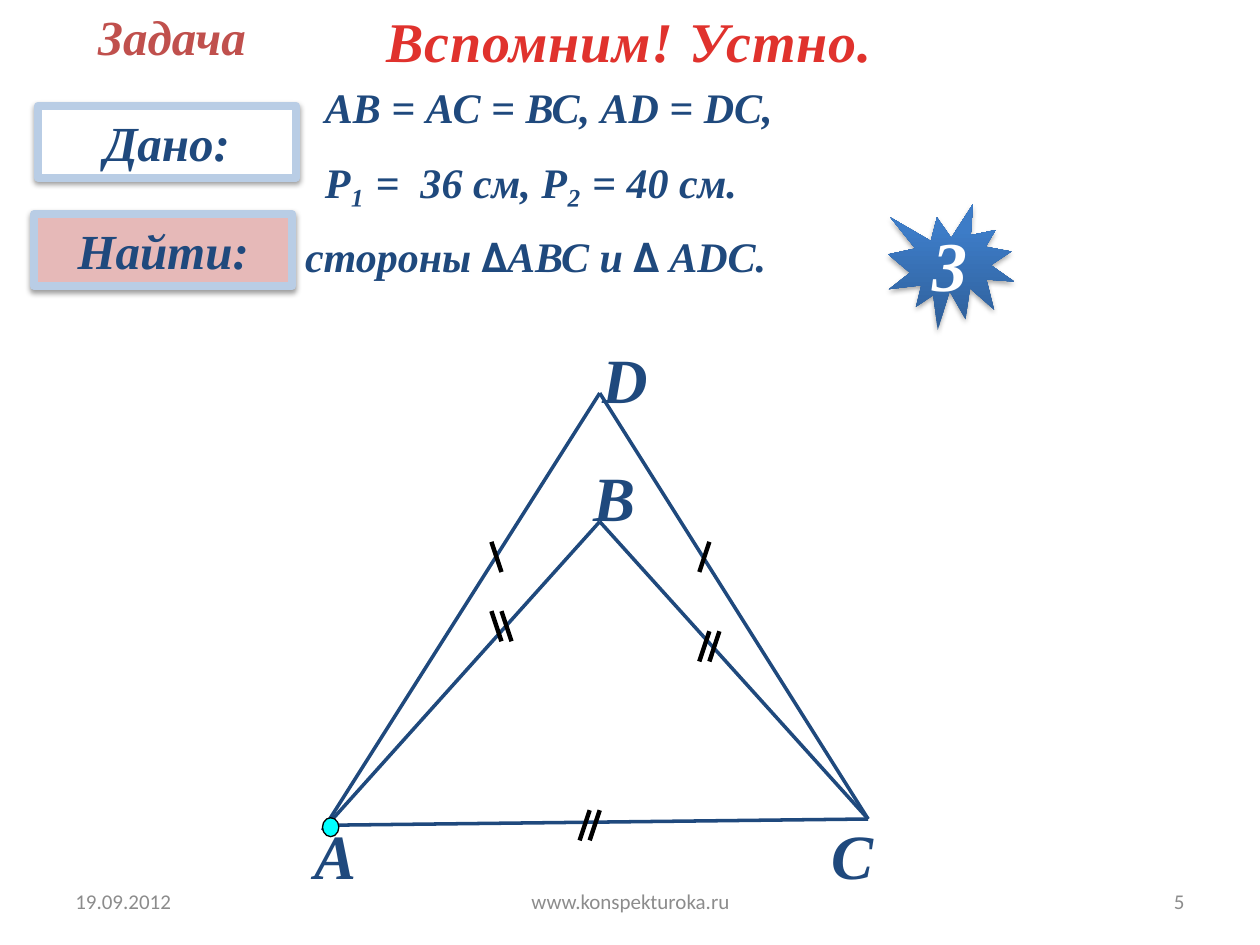
from itertools import groupby
from lxml.etree import SubElement
from pptx import Presentation
from pptx.dml.color import RGBColor
from pptx.enum.shapes import MSO_CONNECTOR, MSO_SHAPE
from pptx.enum.text import MSO_ANCHOR, PP_ALIGN
from pptx.oxml.ns import qn
from pptx.util import Inches, Pt

NAVY, GREY, BLACK = "1F497D", "8C8C8C", "000000"
LEFT, CENTER, RIGHT = PP_ALIGN.LEFT, PP_ALIGN.CENTER, PP_ALIGN.RIGHT
TOP, MIDDLE = MSO_ANCHOR.TOP, MSO_ANCHOR.MIDDLE
SYMBOL, SYMBOL_FONT = "∆", "DejaVu Sans Mono"

HEADING = ("Вспомним! Устно.", (2.95, 0, 4.09, 0.64))
FOOTERS = [
    ("19.09.2012", (0.5, 6.95, 2.33, 0.4), LEFT),
    ("www.konspekturoka.ru", (3.42, 6.95, 3.17, 0.4), CENTER),
    ("5", (7.17, 6.95, 2.33, 0.4), RIGHT),
]
TASK_LABEL = ("Задача", (0.67, 0, 1.39, 0.57))
CONDITIONS = [
    (["АВ = АС = ВС, АD = DC,", "P₁ =  36 см, P₂ = 40 см."], (2.48, 0.59, 4.02, 1.11)),
    ([" стороны ∆АВС и ∆ АDС."], (2.24, 1.78, 4.25, 0.5)),
]
LABEL_BOXES = [
    ("Дано:", (0.3, 0.84, 2.05, 0.57), "FFFFFF"),
    ("Найти:", (0.27, 1.7, 2.05, 0.57), "E6B9B8"),
]
STAR = ("3", (7.05, 1.62, 1, 1))
VERTEX_LABELS = [
    ("D", (4.68, 2.65, 0.57, 0.71)),
    ("С", (6.5, 6.43, 0.54, 0.71)),
    ("А", (2.4, 6.43, 0.54, 0.71)),
    ("В", (4.61, 3.59, 0.54, 0.71)),
]
A, B, C, D = (2.56, 6.59), (4.76, 4.14), (6.89, 6.5), (4.76, 3.12)
SIDES = [(A, D), (D, C), ((2.56, 6.55), C), (A, B), (B, C)]
POINT_A = (2.56, 6.49, 0.13, 0.15)
TICK_WIDTH, TICK_HEIGHT, TICK_GAP = 0.08, 0.24, 0.08
TICKS = [
    (4.68, 6.55, -1, 2),
    (3.98, 4.97, 1, 2),
    (5.63, 5.13, -1, 2),
    (3.94, 4.42, 1, 1),
    (5.59, 4.42, -1, 1),
]


def color(value):
    return RGBColor.from_string(value)


def place(box):
    return [Inches(value) for value in box]


def serif(size, value=NAVY):
    return {"size": Pt(size), "name": "Times New Roman", "bold": True, "italic": True, "color": value}


def write(shape, texts, style, align=LEFT, anchor=TOP, wrap=True, hanging=0):
    frame = shape.text_frame
    frame.word_wrap = wrap
    frame.vertical_anchor = anchor
    for index, text in enumerate(texts):
        paragraph = frame.add_paragraph() if index else frame.paragraphs[0]
        paragraph.alignment = align
        if index:
            paragraph.space_before = Pt(14)
        if hanging:
            properties = paragraph._p.get_or_add_pPr()
            properties.set("marL", str(Inches(hanging)))
            properties.set("indent", str(-Inches(hanging)))
        for is_symbol, characters in groupby(text, lambda character: character == SYMBOL):
            run = paragraph.add_run()
            run.text = "".join(characters)
            for name, value in style.items():
                if name == "color":
                    run.font.color.rgb = color(value)
                else:
                    setattr(run.font, name, value)
            if is_symbol:
                run.font.name = SYMBOL_FONT


def add_text(slide, texts, box, style, **options):
    write(slide.shapes.add_textbox(*place(box)), texts, style, **options)


def add_shape(slide, kind, box, fill=None, line=None, width=0):
    shape = slide.shapes.add_shape(kind, *place(box))
    shape.shadow.inherit = False
    if fill:
        shape.fill.solid()
        shape.fill.fore_color.rgb = color(fill)
    if line:
        shape.line.color.rgb = color(line)
        shape.line.width = Pt(width)
    else:
        shape.line.fill.background()
    return shape


def add_shadow(shape, opacity, distance):
    effects = shape._element.spPr.find(qn("a:effectLst"))
    shadow = SubElement(effects, qn("a:outerShdw"), blurRad=str(Pt(3.1)),
                        dist=str(Pt(distance)), dir="5400000", rotWithShape="0")
    shade = SubElement(shadow, qn("a:srgbClr"), val=BLACK)
    SubElement(shade, qn("a:alpha"), val=str(opacity * 1000))


def add_line(slide, start, end, value, width):
    line = slide.shapes.add_connector(MSO_CONNECTOR.STRAIGHT, *place(start + end))
    line.line.color.rgb = color(value)
    line.line.width = Pt(width)
    SubElement(line._element.spPr, qn("a:effectLst"))


def add_ticks(slide, x, y, lean, count):
    for index in range(count):
        middle = x + (index - (count - 1) / 2) * TICK_GAP
        shift = lean * TICK_WIDTH / 2
        add_line(slide, (middle - shift, y - TICK_HEIGHT / 2),
                 (middle + shift, y + TICK_HEIGHT / 2), BLACK, 2.5)


def add_star(slide, text, box):
    star = add_shape(slide, MSO_SHAPE.EXPLOSION1, box)
    star.fill.gradient()
    star.fill.gradient_angle = 90
    for stop, (position, value) in zip(star.fill.gradient_stops, [(0, "2F5F99"), (0.8, "3D7CC7")]):
        stop.position = position
        stop.color.rgb = color(value)
    add_shadow(star, 35, 1.8)
    write(star, [text], serif(40, "FFFFFF"), align=CENTER, anchor=MIDDLE)


def main():
    presentation = Presentation()
    presentation.slide_width, presentation.slide_height = Inches(10), Inches(7.5)
    slide = presentation.slides.add_slide(presentation.slide_layouts[5])

    text, box = HEADING
    title = slide.shapes.title
    title.left, title.top, title.width, title.height = place(box)
    write(title, [text], serif(32, "E0322D"), align=CENTER, wrap=False)
    title.text_frame.paragraphs[0].runs[0]._r.get_or_add_rPr().set("spc", "50")

    for text, box, align in FOOTERS:
        add_text(slide, [text], box, {"size": Pt(12), "name": "Calibri", "color": GREY},
                 align=align, anchor=MIDDLE)
    text, box = TASK_LABEL
    add_text(slide, [text], box, serif(28, "C0504D"), align=CENTER, wrap=False)
    for text, box, fill in LABEL_BOXES:
        label = add_shape(slide, MSO_SHAPE.RECTANGLE, box, fill, "B9CDE5", 4.5)
        add_shadow(label, 38, 1.6)
        write(label, [text], serif(28), align=CENTER)
    for texts, box in CONDITIONS:
        add_text(slide, texts, box, serif(24), anchor=MIDDLE, hanging=0.5)

    for start, end in SIDES:
        add_line(slide, start, end, NAVY, 2)
    add_shape(slide, MSO_SHAPE.OVAL, POINT_A, "00FFFF", BLACK, 0.75)
    for text, box in VERTEX_LABELS:
        add_text(slide, [text], box, serif(36), wrap=False)
    for tick in TICKS:
        add_ticks(slide, *tick)
    add_star(slide, *STAR)

    presentation.save("out.pptx")


if __name__ == "__main__":
    main()
